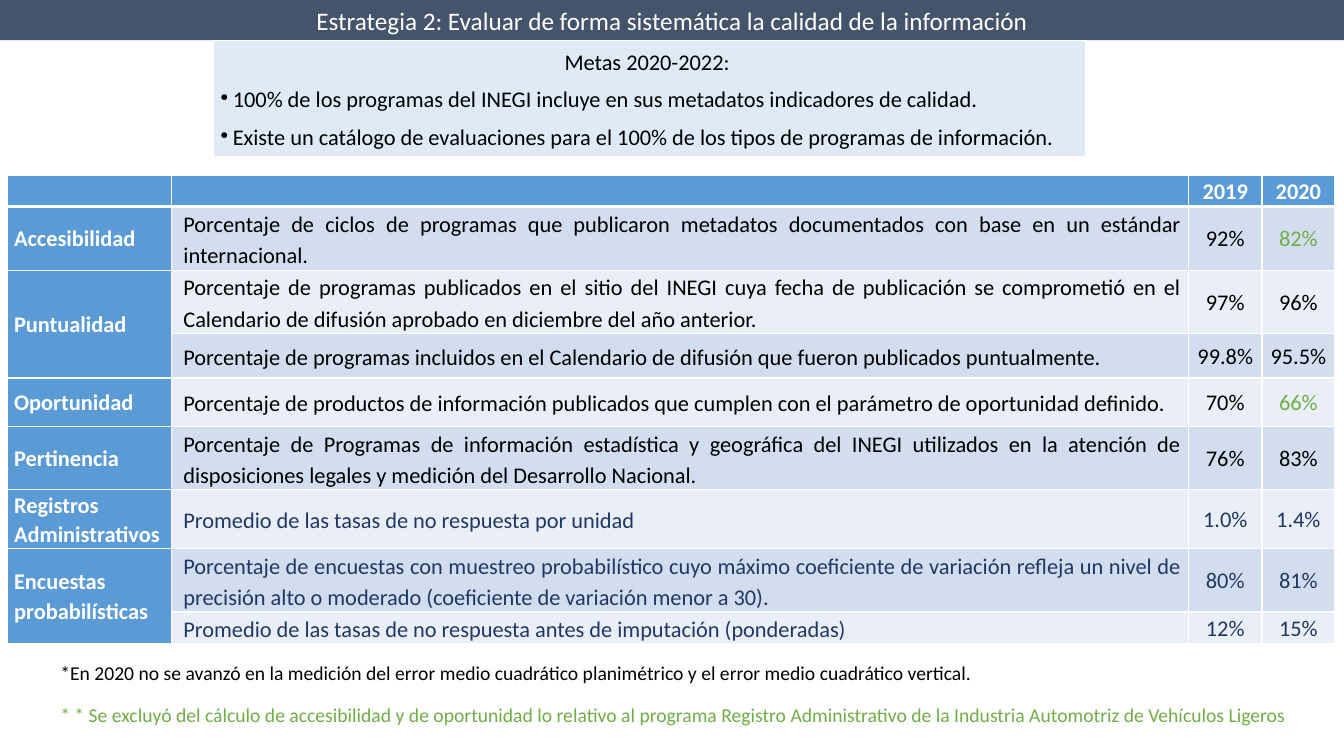
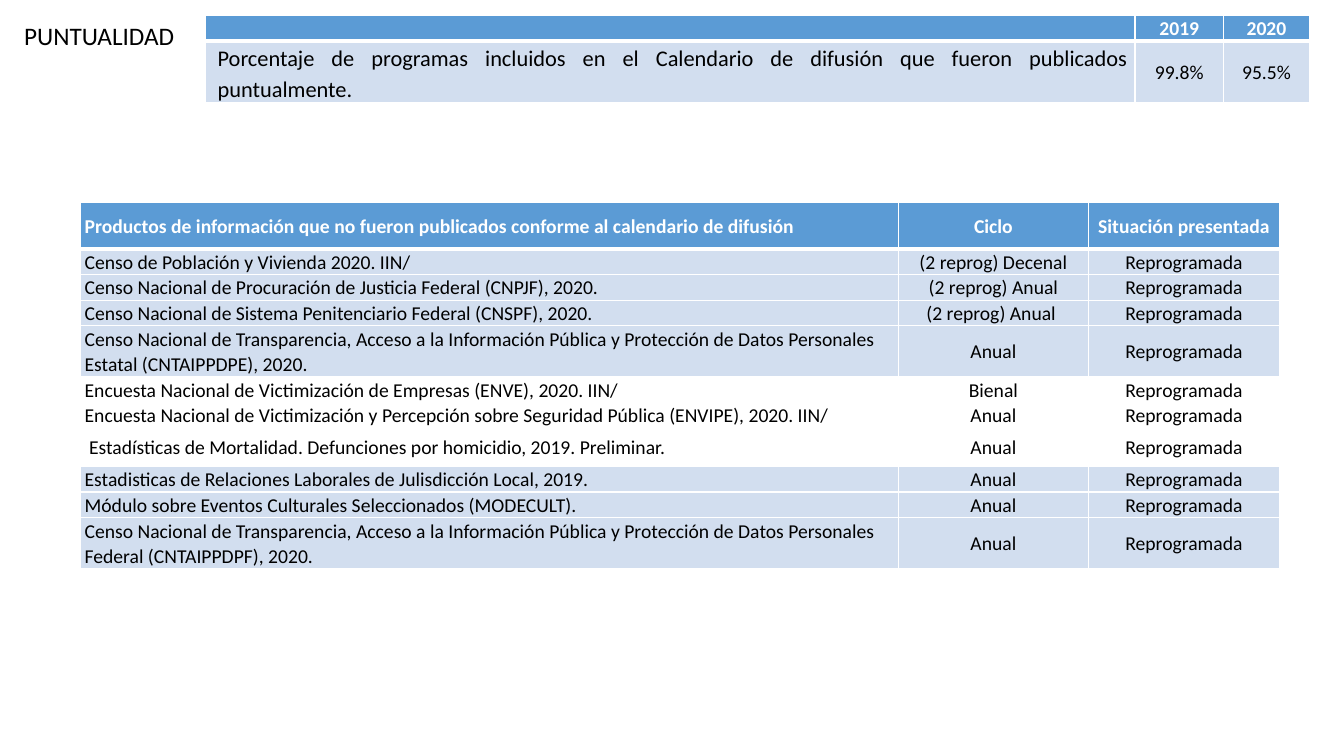
from dataclasses import dataclass
from lxml.etree import SubElement
from pptx import Presentation
from pptx.dml.color import RGBColor
from pptx.enum.shapes import MSO_SHAPE
from pptx.enum.text import MSO_ANCHOR, PP_ALIGN
from pptx.oxml.ns import qn
from pptx.util import Inches, Pt


@dataclass(frozen=True)
class Theme:
    font: str = "Calibri"
    title: int = 18
    body: int = 16
    small: int = 14
    white: str = "FFFFFF"
    black: str = "000000"
    bar: str = "44546A"
    head: str = "5B9BD5"
    dark: str = "D2DEEF"
    light: str = "EAEFF7"
    goals: str = "DEEBF7"
    green: str = "70AD47"
    navy: str = "1F3864"


T = Theme()
LEFT, CENTER, JUSTIFY = PP_ALIGN.LEFT, PP_ALIGN.CENTER, PP_ALIGN.JUSTIFY

prs = Presentation()
prs.slide_width, prs.slide_height = Inches(13.33), Inches(7.5)
CW, RH = prs.slide_width / 100, prs.slide_height / 100


def write(tf, text, size=T.body, color=T.black, bold=False, align=LEFT,
          spacing=None, after=0, indent=0, bullet=False):
    tf.word_wrap = True
    p = tf.add_paragraph() if tf.text else tf.paragraphs[0]
    p.alignment, p.line_spacing, p.space_after = align, spacing, Pt(after)
    pPr = p._p.get_or_add_pPr()
    pPr.set("marL", str(Inches(indent)))
    if bullet:
        pPr.set("indent", str(-Inches(indent)))
        SubElement(pPr, qn("a:buChar")).set("char", "•")
    if not text:
        p._p.get_or_add_endParaRPr().set("sz", str(size * 100))
        return
    r = p.add_run()
    r.text = text
    r.font.name, r.font.size, r.font.bold = T.font, Pt(size), bold
    r.font.color.rgb = RGBColor.from_string(color)


def add_grid(s, x, y, cols, rows, fills, inset=0.07, thick=True):
    tbl = s.shapes.add_table(len(rows), len(cols), int(x * CW), int(y * RH),
                             int(sum(cols) * CW), int(sum(rows) * RH)).table
    tbl.first_row = tbl.horz_banding = False
    for col, w in zip(tbl.columns, cols):
        col.width = int(w * CW)
    for i, (row, h) in enumerate(zip(tbl.rows, rows)):
        row.height = int(h * RH)
        for cell in row.cells:
            cell.vertical_anchor = MSO_ANCHOR.MIDDLE
            cell.margin_left = cell.margin_right = Inches(inset)
            cell.margin_top = cell.margin_bottom = 0
            for side in "LRTB":
                heavy = thick and (i, side) in ((0, "B"), (1, "T"))
                ln = SubElement(cell._tc.get_or_add_tcPr(), qn(f"a:ln{side}"))
                ln.set("w", str(Pt(3 if heavy else 1)))
                clr = SubElement(SubElement(ln, qn("a:solidFill")), qn("a:srgbClr"))
                clr.set("val", T.white)
            if fills[i]:
                cell.fill.solid()
                cell.fill.fore_color.rgb = RGBColor.from_string(fills[i])
            else:
                cell.fill.background()
    return tbl


s = prs.slides.add_slide(prs.slide_layouts[6])
sp = s.shapes.add_shape(MSO_SHAPE.RECTANGLE, 0, 0, prs.slide_width, int(5.33 * RH))
sp.shadow.inherit = False
sp.fill.solid()
sp.fill.fore_color.rgb = RGBColor.from_string(T.bar)
sp.line.fill.background()
write(sp.text_frame, "Estrategia 2: Evaluar de forma sistemática la calidad de la información",
      size=T.title, color=T.white, align=CENTER)

tbl = add_grid(s, 15.9, 5.33, [64.88], [15.6], [T.goals])
tf = tbl.cell(0, 0).text_frame
write(tf, "Metas 2020-2022: ", align=CENTER, spacing=1.07, after=6)
for goal in (
    "100% de los programas del INEGI incluye en sus metadatos indicadores de calidad.",
    "Existe un catálogo de evaluaciones para el 100% de los tipos de programas de información.",
):
    write(tf, goal, spacing=1.07, after=6, indent=0.12, bullet=True)

indicators = [
    ("", "", "2019", "2020"),
    ("Accesibilidad", "Porcentaje de ciclos de programas que publicaron metadatos documentados con base en un estándar internacional.", "92%", "82%"),
    ("Puntualidad", "Porcentaje de programas publicados en el sitio del INEGI cuya fecha de publicación se comprometió en el Calendario de difusión aprobado en diciembre del año anterior.", "97%", "96%"),
    ("", "Porcentaje de programas incluidos en el Calendario de difusión que fueron publicados puntualmente.", "99.8%", "95.5%"),
    ("Oportunidad", "Porcentaje de productos de información publicados que cumplen con el parámetro de oportunidad definido.", "70%", "66%"),
    ("Pertinencia", "Porcentaje de Programas de información estadística y geográfica del INEGI utilizados en la atención de disposiciones legales y medición del Desarrollo Nacional.", "76%", "83%"),
    ("Registros Administrativos", "Promedio de las tasas de no respuesta por unidad", "1.0%", "1.4%"),
    ("Encuestas probabilísticas", "Porcentaje de encuestas con muestreo probabilístico cuyo máximo coeficiente de variación refleja un nivel de precisión alto o moderado (coeficiente de variación menor a 30).", "80%", "81%"),
    ("", "Promedio de las tasas de no respuesta antes de imputación (ponderadas)", "12%", "15%"),
]
tbl = add_grid(s, 0.53, 23.2, [12.22, 75.68, 5.48, 5.4],
               [4.13, 8.4, 8.4, 5.87, 6.4, 8.4, 7.6, 8.4, 4.13],
               [T.head] + [T.dark, T.light] * 4)
for i, row in enumerate(indicators):
    for j, text in enumerate(row):
        cell = tbl.cell(i, j)
        head = i == 0 or j == 0
        if j == 0:
            cell.fill.fore_color.rgb = RGBColor.from_string(T.head)
        color = T.white if head else T.green if text in ("82%", "66%") else T.navy if i > 5 else T.black
        if j == 1:
            write(cell.text_frame, text, color=color, align=JUSTIFY, spacing=1.15, after=8, indent=0.05)
        else:
            write(cell.text_frame, text, color=color, bold=head, align=CENTER if j else LEFT,
                  spacing=1.07, after=6)
for i in (2, 7):
    tbl.cell(i, 0).merge(tbl.cell(i + 1, 0))

s2 = prs.slides.add_slide(prs.slide_layouts[6])
for page, x, y, w, h, text, fmt in (
    (s, 3.75, 86.8, 82.05, 7.6,
     "*En 2020 no se avanzó en la medición del error medio cuadrático planimétrico y el error medio cuadrático vertical.",
     dict(size=T.small)),
    (s, 3.75, 92.27, 93.3, 7.6,
     "* * Se excluyó del cálculo de accesibilidad y de oportunidad lo relativo al programa Registro Administrativo de la Industria Automotriz de Vehículos Ligeros",
     dict(size=T.small, color=T.green)),
    (s2, -0.53, 2, 15.83, 5.33, "PUNTUALIDAD", dict(size=T.title, align=CENTER)),
):
    sp = page.shapes.add_textbox(int(x * CW), int(y * RH), int(w * CW), int(h * RH))
    write(sp.text_frame, text, **fmt)

tbl = add_grid(s2, 15.3, 2, [69.15, 6.6, 6.38], [3.4, 7.9], [T.head, T.dark])
for i, row in enumerate((indicators[0][1:], indicators[3][1:])):
    for j, text in enumerate(row):
        tf = tbl.cell(i, j).text_frame
        if i and not j:
            write(tf, text, align=JUSTIFY, spacing=1.15, after=8, indent=0.05)
        else:
            write(tf, text, size=T.small, color=T.black if i else T.white, bold=not i,
                  align=CENTER, spacing=1.07, after=6)

LINE = 3.39
products = [
    ("Productos de información que no fueron publicados conforme al calendario de difusión", "Ciclo", 6.13, T.head),
    ("Censo de Población y Vivienda 2020. IIN/", "(2 reprog) Decenal", LINE, T.dark),
    ("Censo Nacional de Procuración de Justicia Federal (CNPJF), 2020.", "(2 reprog) Anual", LINE, T.dark),
    ("Censo Nacional de Sistema Penitenciario Federal (CNSPF), 2020.", "(2 reprog) Anual ", LINE, T.dark),
    ("Censo Nacional de Transparencia, Acceso a la Información Pública y Protección de Datos Personales Estatal (CNTAIPPDPE), 2020.", "Anual", 2 * LINE, T.dark),
    ("Encuesta Nacional de Victimización de Empresas (ENVE), 2020. IIN/", "Bienal", LINE, None),
    ("Encuesta Nacional de Victimización y Percepción sobre Seguridad Pública (ENVIPE), 2020. IIN/", "Anual", LINE, None),
    (" Estadísticas de Mortalidad. Defunciones por homicidio, 2019. Preliminar.", "Anual", 5.07, None),
    ("Estadisticas de Relaciones Laborales de Julisdicción Local, 2019.", "Anual", LINE, T.dark),
    ("Módulo sobre Eventos Culturales Seleccionados (MODECULT).", "Anual", LINE, T.dark),
    ("Censo Nacional de Transparencia, Acceso a la Información Pública y Protección de Datos Personales Federal (CNTAIPPDPF), 2020.", "Anual", 2 * LINE, T.dark),
]
names, cycles, heights, fills = zip(*products)
tbl = add_grid(s2, 6, 26.8, [60.83, 14.18, 14.18], heights, fills, inset=0.04)
for i, (name, cycle) in enumerate(zip(names, cycles)):
    status = "Reprogramada" if i else "Situación presentada"
    for j, text in enumerate((name, cycle, status)):
        write(tbl.cell(i, j).text_frame, text, size=T.small, color=T.black if i else T.white,
              bold=not i, align=CENTER if j else LEFT, spacing=1.07, after=8)

prs.save("out.pptx")
